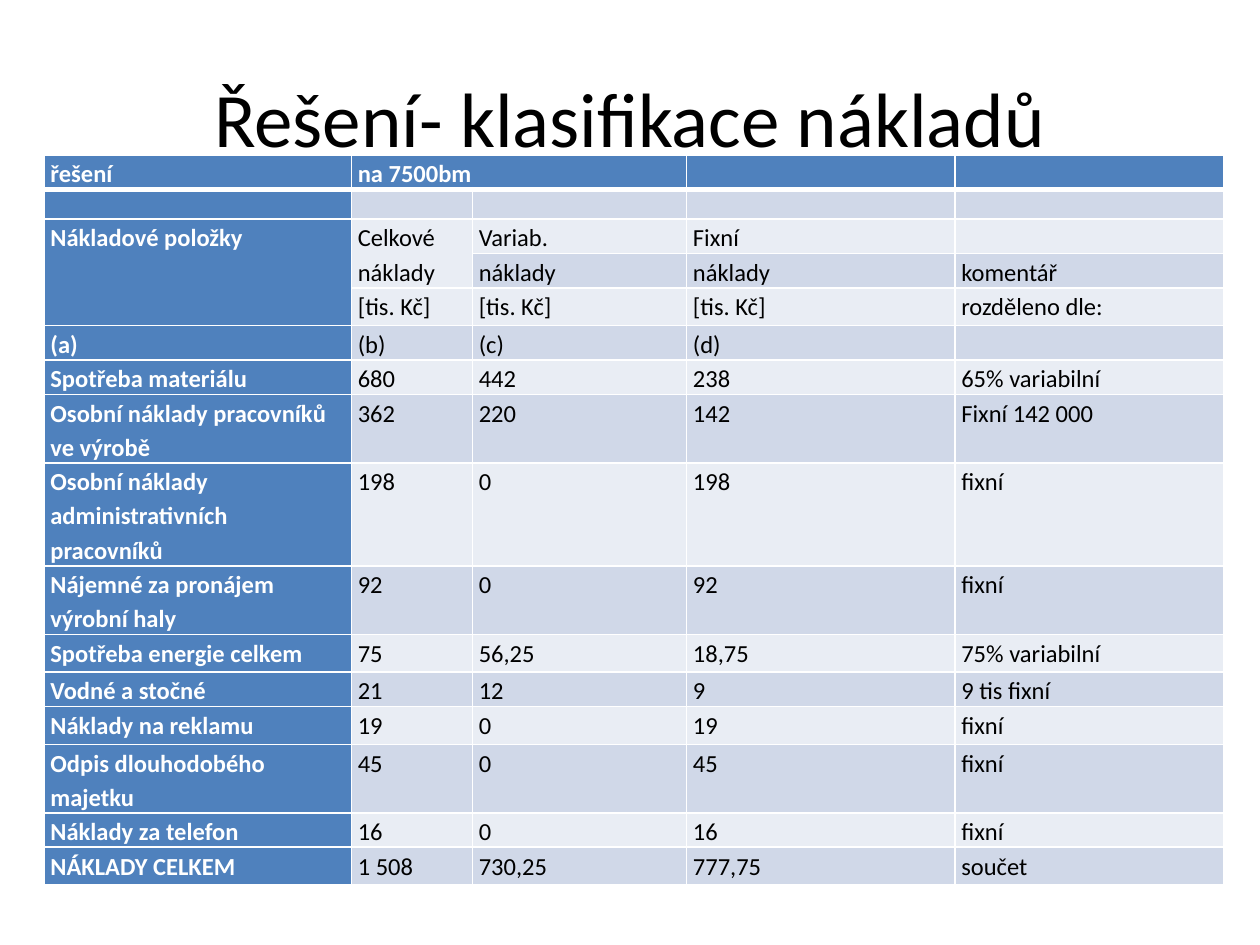
from lxml import etree
from pptx import Presentation
from pptx.dml.color import RGBColor
from pptx.enum import text
from pptx.oxml import ns
from pptx.util import Inches, Pt

FONT = "Calibri"
COLORS = {"accent": "4F81BD", "odd": "D0D8E8", "even": "E9EDF4",
          "white": "FFFFFF", "black": "000000"}
COLUMN_WIDTHS = [2.44, 0.96, 1.7, 2.13, 2.13]
COSTS = [
    (0.14, "řešení", "na 7500bm", "", "", ""),
    (0.15, "", "", "", "", ""),
    (0.15, "Nákladové položky", "Celkové náklady", "Variab.", "Fixní", ""),
    (0.15, "", "", "náklady", "náklady", "komentář"),
    (0.3, "", "[tis. Kč]", "[tis. Kč]", "[tis. Kč]", "rozděleno dle:"),
    (0.15, "(a)", "(b)", "(c)", "(d)", ""),
    (0.16, "Spotřeba materiálu", "680", "442", "238", "65% variabilní"),
    (0.45, "Osobní náklady pracovníků ve výrobě", "362", "220", "142", "Fixní 142 000"),
    (0.57, "Osobní náklady administrativních pracovníků", "198", "0", "198", "fixní"),
    (0.45, "Nájemné za pronájem výrobní haly", "92", "0", "92", "fixní"),
    (0.3, "Spotřeba energie celkem", "75", "56,25", "18,75", "75% variabilní"),
    (0.15, "Vodné a stočné", "21", "12", "9", "9 tis fixní"),
    (0.3, "Náklady na reklamu", "19", "0", "19", "fixní"),
    (0.45, "Odpis dlouhodobého majetku", "45", "0", "45", "fixní"),
    (0.15, "Náklady za telefon", "16", "0", "16", "fixní"),
    (0.3, "NÁKLADY CELKEM", "1 508", "730,25", "777,75", "součet"),
]
MERGES = [((0, 1), (0, 2)), ((2, 0), (4, 0)), ((2, 1), (3, 1))]


def color(name):
    return RGBColor.from_string(COLORS[name])


def add_run(paragraph, wording, size, color_name, bold=False):
    run = paragraph.add_run()
    run.text = wording
    run.font.name = FONT
    run.font.size = Pt(size)
    run.font.bold = bold
    run.font.color.rgb = color(color_name)


def add_borders(cell, top, bottom):
    properties = cell._tc.get_or_add_tcPr()
    for side, width in (("L", 1), ("R", 1), ("T", top), ("B", bottom)):
        border = etree.SubElement(properties, ns.qn(f"a:ln{side}"), w=str(Pt(width)))
        fill = etree.SubElement(border, ns.qn("a:solidFill"))
        etree.SubElement(fill, ns.qn("a:srgbClr"), val=COLORS["white"])


def fill_cell(cell, wording, row, column):
    heading = row == 0 or column == 0
    add_borders(cell, 3 if row == 1 else 1, 3 if row == 0 else 1)
    cell.fill.solid()
    cell.fill.fore_color.rgb = color("accent" if heading else ("even", "odd")[row % 2])
    cell.margin_left = cell.margin_right = Inches(0.05)
    cell.margin_top = cell.margin_bottom = 0
    paragraph = cell.text_frame.paragraphs[0]
    if wording:
        paragraph.line_spacing = 1.15
        paragraph.space_after = Pt(10)
        add_run(paragraph, wording, 14, "white" if heading else "black", heading)
    else:
        etree.SubElement(paragraph._p, ns.qn("a:endParaRPr"), sz="1400")


def add_title(slide, wording):
    title = slide.shapes.title
    title.left, title.top = Inches(0.5), Inches(0.3)
    title.width, title.height = Inches(9), Inches(1.25)
    title.text_frame.vertical_anchor = text.MSO_ANCHOR.MIDDLE
    paragraph = title.text_frame.paragraphs[0]
    paragraph.alignment = text.PP_ALIGN.CENTER
    add_run(paragraph, wording, 44, "black")


def add_cost_table(slide):
    costs = slide.shapes.add_table(
        len(COSTS), len(COLUMN_WIDTHS), Inches(0.35), Inches(1.23),
        Inches(sum(COLUMN_WIDTHS)), Inches(sum(row[0] for row in COSTS))).table
    costs.first_col = True
    for column, width in zip(costs.columns, COLUMN_WIDTHS):
        column.width = Inches(width)
    for row, (height, *wordings) in enumerate(COSTS):
        costs.rows[row].height = Inches(height)
        for column, wording in enumerate(wordings):
            fill_cell(costs.cell(row, column), wording, row, column)
    for first, last in MERGES:
        costs.cell(*first).merge(costs.cell(*last))


def main():
    presentation = Presentation()
    presentation.slide_width, presentation.slide_height = Inches(10), Inches(7.5)
    slide = presentation.slides.add_slide(presentation.slide_layouts[5])
    add_title(slide, "Řešení- klasifikace nákladů")
    add_cost_table(slide)
    presentation.save("out.pptx")


if __name__ == "__main__":
    main()
